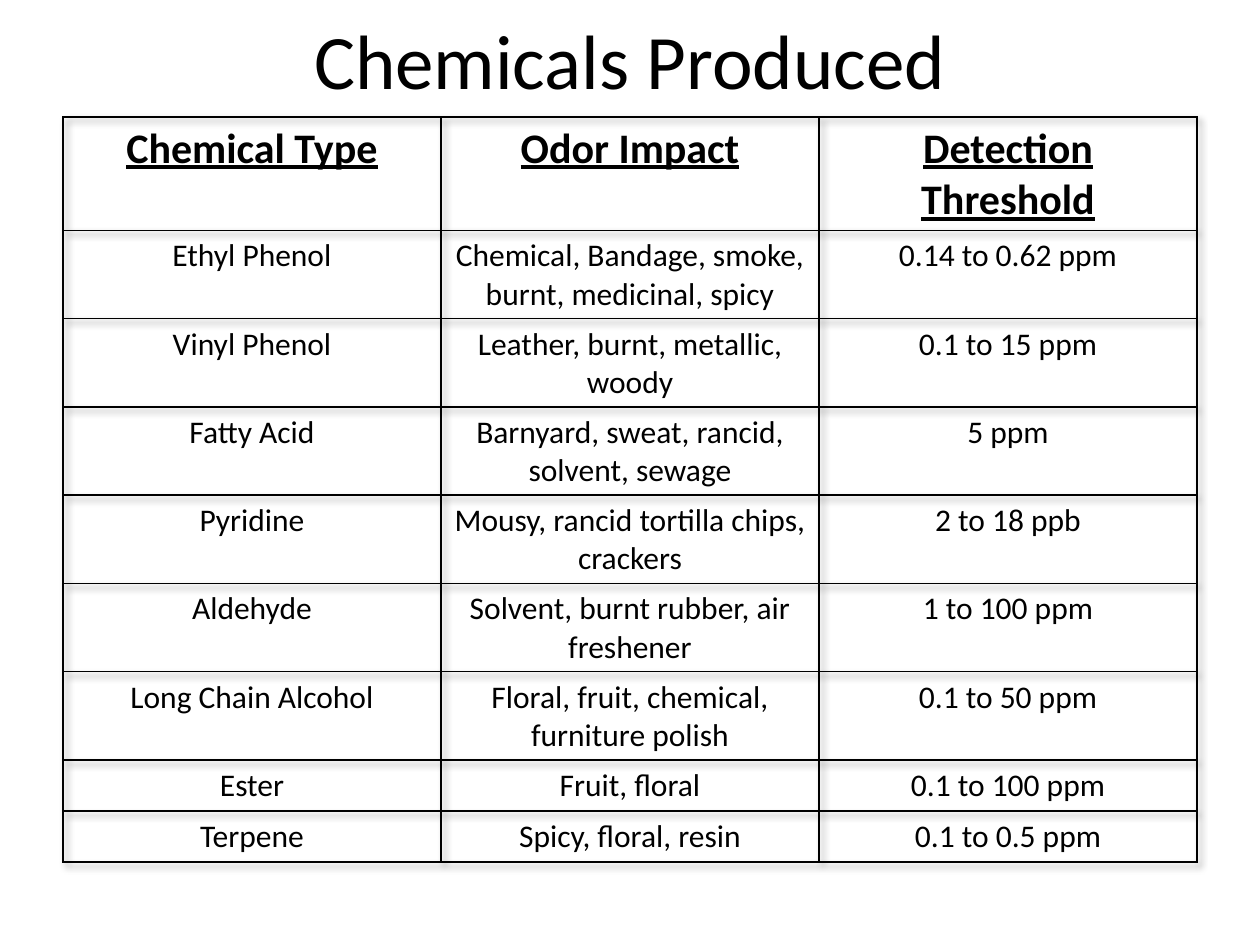
from dataclasses import dataclass
from typing import NamedTuple

from lxml.etree import SubElement
from pptx import Presentation
from pptx.dml.color import RGBColor
from pptx.enum.text import MSO_ANCHOR, PP_ALIGN
from pptx.oxml.ns import qn
from pptx.util import Emu, Pt

PX_PER_INCH = 126


@dataclass(frozen=True)
class Theme:
    font: str = "Calibri"
    ink: str = "000000"
    title: int = 44
    header: int = 24
    body: int = 18
    border: int = 1


class Box(NamedTuple):
    left: int
    top: int
    width: int
    height: int


class Chemical(NamedTuple):
    name: str
    odor: str
    threshold: str


THEME = Theme()
TITLE_BOX = Box(63, 0, 1134, 117)
TABLE_BOX = Box(63, 117, 1134, 745)
ROW_HEIGHT = 51
FIRST_CHEMICAL_HEIGHT = 86
HEADER = Chemical("Chemical Type", "Odor Impact", "Detection Threshold")
CHEMICALS = [
    Chemical("Ethyl Phenol", "Chemical, Bandage, smoke, burnt, medicinal, spicy", "0.14 to 0.62 ppm"),
    Chemical("Vinyl Phenol", "Leather, burnt, metallic, woody", "0.1 to 15 ppm"),
    Chemical("Fatty Acid", "Barnyard, sweat, rancid, solvent, sewage", "5 ppm"),
    Chemical("Pyridine", "Mousy, rancid tortilla chips, crackers", "2 to 18 ppb"),
    Chemical("Aldehyde", "Solvent, burnt rubber, air freshener", "1 to 100 ppm"),
    Chemical("Long Chain Alcohol", "Floral, fruit, chemical, furniture polish", "0.1 to 50 ppm"),
    Chemical("Ester", "Fruit, floral", "0.1 to 100 ppm"),
    Chemical("Terpene", "Spicy, floral, resin", "0.1 to 0.5 ppm"),
]


def px(n: int) -> Emu:
    return Emu(round(n * 914400 / PX_PER_INCH))


def write(tf, text: str, size: int, heading: bool = False) -> None:
    p = tf.paragraphs[0]
    p.text = text
    p.alignment = PP_ALIGN.CENTER
    p.font.name = THEME.font
    p.font.size = Pt(size)
    p.font.bold = heading
    p.font.underline = heading
    p.font.color.rgb = RGBColor.from_string(THEME.ink)


def add_title(s, box: Box, text: str) -> None:
    tf = s.shapes.add_textbox(*map(px, box)).text_frame
    tf.word_wrap = True
    tf.vertical_anchor = MSO_ANCHOR.MIDDLE
    write(tf, text, THEME.title)


def set_borders(cell) -> None:
    tc_pr = cell._tc.get_or_add_tcPr()
    for side in ("lnL", "lnR", "lnT", "lnB"):
        ln = SubElement(tc_pr, qn(f"a:{side}"), w=str(Pt(THEME.border)))
        fill = SubElement(ln, qn("a:solidFill"))
        SubElement(fill, qn("a:srgbClr"), val=THEME.ink)


def add_shadow(table) -> None:
    effects = SubElement(table._tbl.tblPr, qn("a:effectLst"))
    table._tbl.tblPr.insert(0, effects)
    shadow = SubElement(effects, qn("a:outerShdw"), blurRad="50800", dist="38100",
                        dir="2700000", algn="tl", rotWithShape="0")
    color = SubElement(shadow, qn("a:srgbClr"), val=THEME.ink)
    SubElement(color, qn("a:alpha"), val="40000")


def add_chemical_table(s, box: Box, rows: list[Chemical]) -> None:
    columns = len(Chemical._fields)
    table = s.shapes.add_table(len(rows), columns, *map(px, box)).table
    table.horz_banding = False
    add_shadow(table)
    for column in table.columns:
        column.width = px(box.width // columns)
    for i, chemical in enumerate(rows):
        table.rows[i].height = px(FIRST_CHEMICAL_HEIGHT if i == 1 else ROW_HEIGHT)
        for cell, text in zip(table.rows[i].cells, chemical):
            heading = i == 0
            write(cell.text_frame, text, THEME.header if heading else THEME.body, heading)
            set_borders(cell)
            cell.fill.background()


def main() -> None:
    """Build the slide of chemicals with their odors and detection thresholds."""
    prs = Presentation()
    prs.slide_width, prs.slide_height = px(1260), px(945)
    s = prs.slides.add_slide(prs.slide_layouts[6])
    add_title(s, TITLE_BOX, "Chemicals Produced")
    add_chemical_table(s, TABLE_BOX, [HEADER, *CHEMICALS])
    prs.save("out.pptx")


if __name__ == "__main__":
    main()
